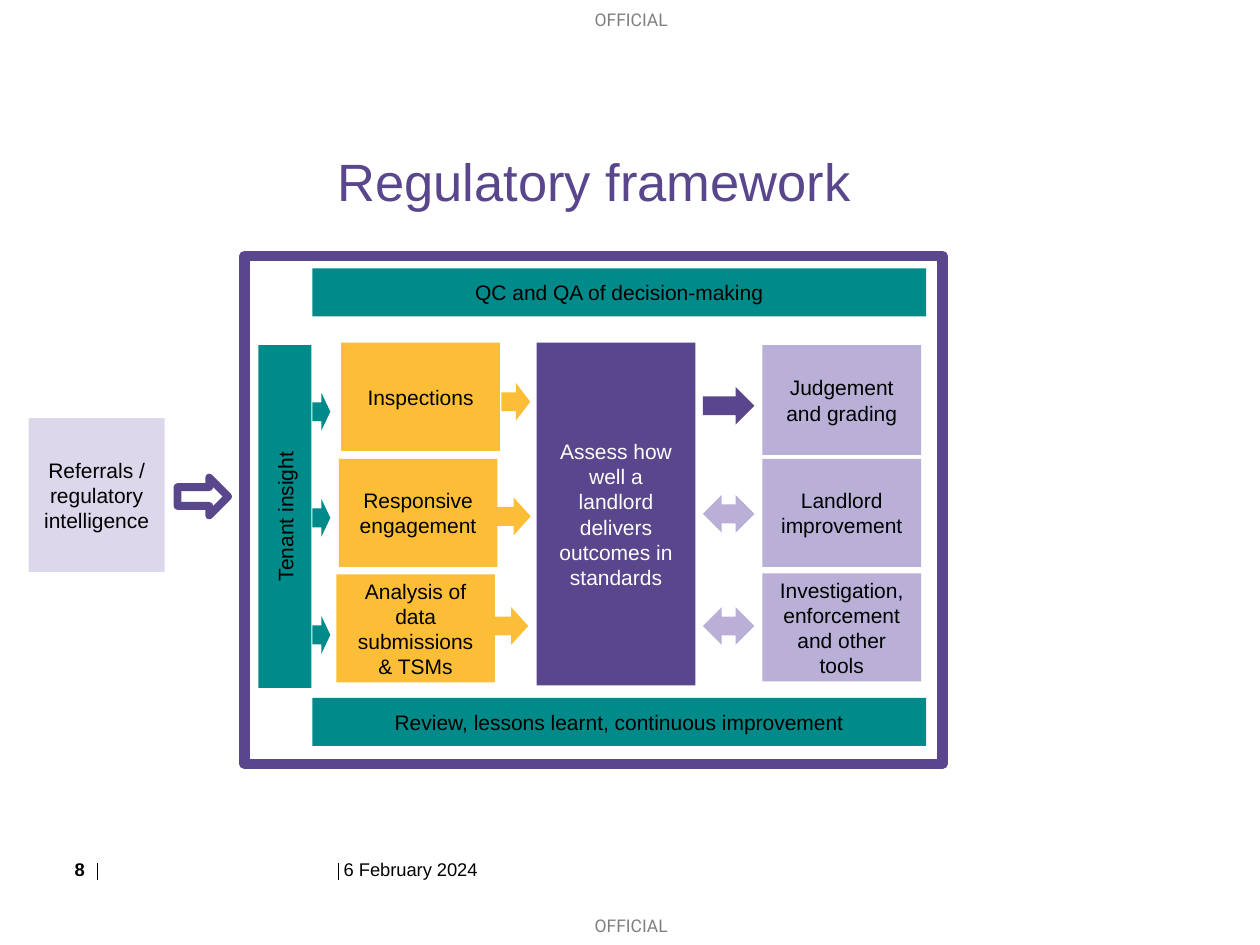
from dataclasses import dataclass
from lxml.etree import SubElement as Sub
from pptx import Presentation
from pptx.dml.color import RGBColor as Rgb
from pptx.enum.shapes import MSO_CONNECTOR as Conn, MSO_SHAPE as Kind
from pptx.enum.text import MSO_ANCHOR as Anchor, PP_ALIGN as Align
from pptx.oxml.ns import qn
from pptx.util import Cm, Pt


@dataclass(frozen=True)
class Theme:
    font: str = "Arial"
    mark: str = "Roboto"
    black: str = "000000"
    white: str = "FFFFFF"
    purple: str = "59468D"
    lilac: str = "BAAFD7"
    pale: str = "DCD7EB"
    gold: str = "FCBE37"
    teal: str = "008A89"
    title: float = 30
    body: float = 12
    foot: float = 10.5
    tag: float = 10


T = Theme()


def style(para, size, color, face=T.font, align=Align.CENTER):
    para.alignment = align
    font = para.font
    font.name, font.size = face, Pt(size)
    font.color.rgb = Rgb.from_string(color)


def shape(slide, kind, at, fill=None, line=None, width=0):
    item = slide.shapes.add_shape(kind, *map(Cm, at))
    item.shadow.inherit = False
    if fill:
        item.fill.solid()
        item.fill.fore_color.rgb = Rgb.from_string(fill)
    else:
        item.fill.background()
    if line:
        item.line.color.rgb = Rgb.from_string(line)
        item.line.width = Pt(width)
    else:
        item.line.fill.background()
    return item


def box(slide, text, at, fill, color=T.black):
    frame = shape(slide, Kind.RECTANGLE, at, fill).text_frame
    frame.word_wrap = True
    frame.vertical_anchor = Anchor.MIDDLE
    frame.text = text
    style(frame.paragraphs[0], T.body, color)
    return frame


def label(slide, text, at, size, color=T.black, face=T.font,
          align=Align.CENTER, wrap=True):
    frame = slide.shapes.add_textbox(*map(Cm, at)).text_frame
    frame.word_wrap = wrap
    frame.margin_left = frame.margin_right = 0
    frame.margin_top = frame.margin_bottom = 0
    frame.text = text
    para = frame.paragraphs[0]
    style(para, size, color, face, align)
    return para


def tag(slide, top):
    para = label(slide, "OFFICIAL", (11.99, top, 1.52, 0.43), T.tag,
                 face=T.mark, align=Align.LEFT, wrap=False)
    color = next(para.font._element.iter(qn("a:srgbClr")))
    Sub(color, qn("a:alpha"), val="50000")


def rule(slide, left):
    line = slide.shapes.add_connector(
        Conn.STRAIGHT, Cm(left), Cm(17.73), Cm(left), Cm(17.4))
    line.line.color.rgb = Rgb.from_string(T.black)
    line.line.width = Pt(0.75)
    Sub(line._element.spPr, qn("a:effectLst"))


def stages(slide):
    left = [
        ("Inspections", 6.88, 6.91),
        ("Responsive engagement", 6.83, 9.25),
        ("Analysis of data submissions & TSMs", 6.78, 11.58),
    ]
    right = [
        ("Judgement and grading", 6.96, 2.21),
        ("Landlord improvement", 9.25, 2.18),
        ("Investigation, enforcement and other tools", 11.56, 2.18),
    ]
    for text, x, y in left:
        box(slide, text, (x, y, 3.2, 2.18), T.gold)
    box(slide, "Assess how well a landlord delivers outcomes in standards",
        (10.82, 6.91, 3.2, 6.91), T.purple, T.white)
    for text, y, high in right:
        box(slide, text, (15.37, y, 3.2, high), T.lilac)
    for text, y in [("Review, lessons learnt, continuous improvement", 14.07),
                    ("QC and QA of decision-making", 5.41)]:
        box(slide, text, (6.3, y, 12.37, 0.97), T.teal)
    side = box(slide, "Tenant insight", (5.21, 6.96, 1.07, 6.91), T.teal)
    side._txBody.bodyPr.set("vert", "vert270")
    box(slide, "Referrals / regulatory intelligence",
        (0.58, 8.43, 2.74, 3.1), T.pale)


def arrows(slide):
    one, two = Kind.RIGHT_ARROW, Kind.LEFT_RIGHT_ARROW
    flows = [
        (one, 10.11, 7.72, 0.58, T.gold),
        (one, 10.01, 10.03, 0.69, T.gold),
        (one, 9.96, 12.24, 0.69, T.gold),
        (one, 14.17, 7.8, 1.04, T.purple),
        (two, 14.17, 9.98, 1.04, T.lilac),
        (two, 14.17, 12.24, 1.04, T.lilac),
    ]
    flows += [(one, 6.3, y, 0.36, T.teal) for y in (7.92, 10.06, 12.42)]
    for kind, x, y, wide, fill in flows:
        shape(slide, kind, (x, y, wide, 0.76), fill)
    shape(slide, one, (3.58, 9.63, 1.02, 0.76), line=T.purple, width=4.5)


def main():
    deck = Presentation()
    deck.slide_width, deck.slide_height = Cm(25.4), Cm(19.05)
    slide = deck.slides.add_slide(deck.slide_layouts[6])
    for left in (1.96, 6.83):
        rule(slide, left)
    for top in (18.44, 0.18):
        tag(slide, top)
    title = label(slide, "Regulatory framework", (0.71, 3.15, 22.53, 1.75),
                  T.title, T.purple)
    title.line_spacing = 0.9
    stages(slide)
    arrows(slide)
    shape(slide, Kind.RECTANGLE, (4.93, 5.16, 14.07, 10.24),
          line=T.purple, width=6)
    label(slide, "6 February 2024", (6.93, 17.3, 5.97, 0.3), T.foot,
          align=Align.LEFT)
    page = label(slide, "8", (1.35, 17.3, 0.51, 0.3), T.foot)
    page.font.bold = True
    deck.save("out.pptx")


if __name__ == "__main__":
    main()
